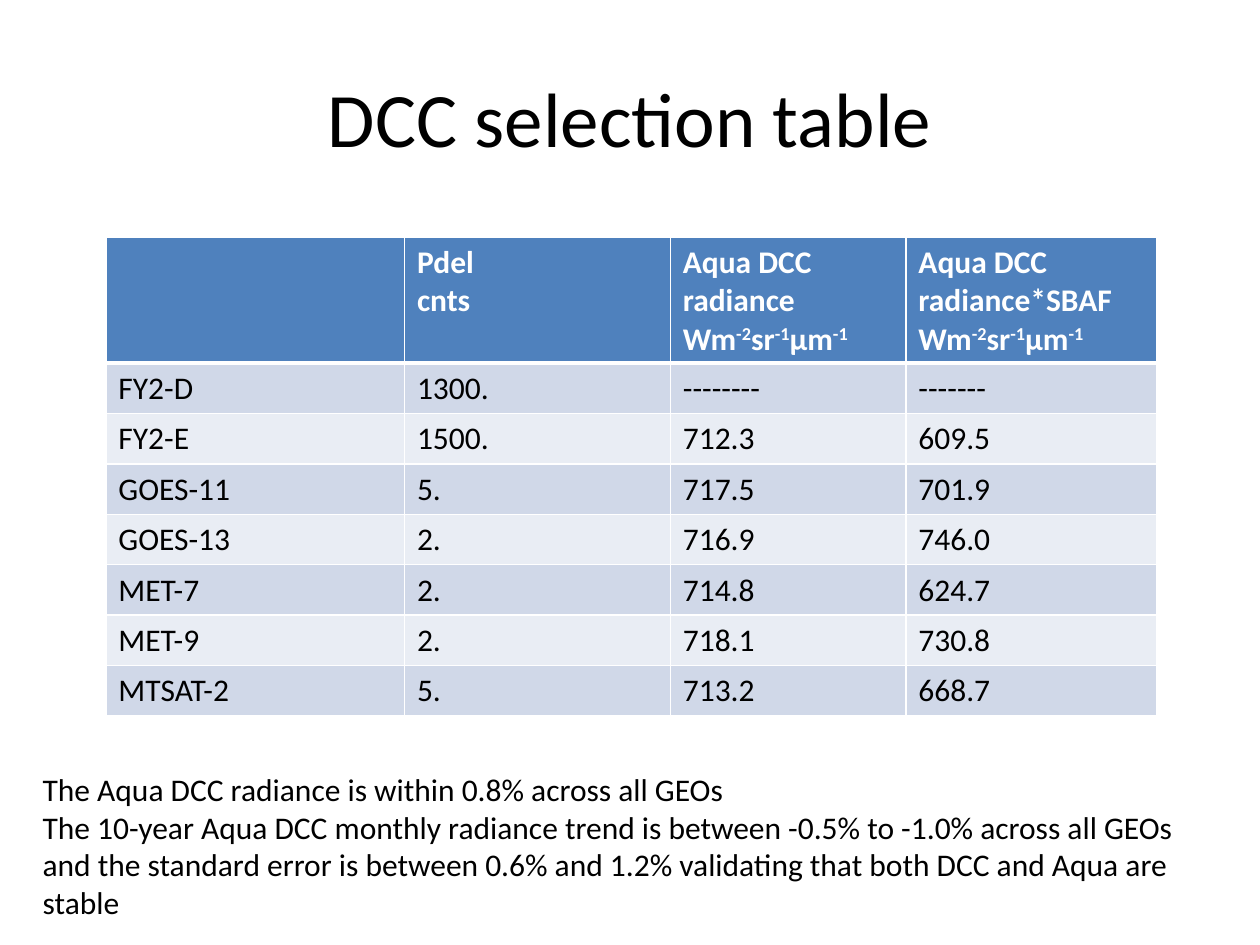
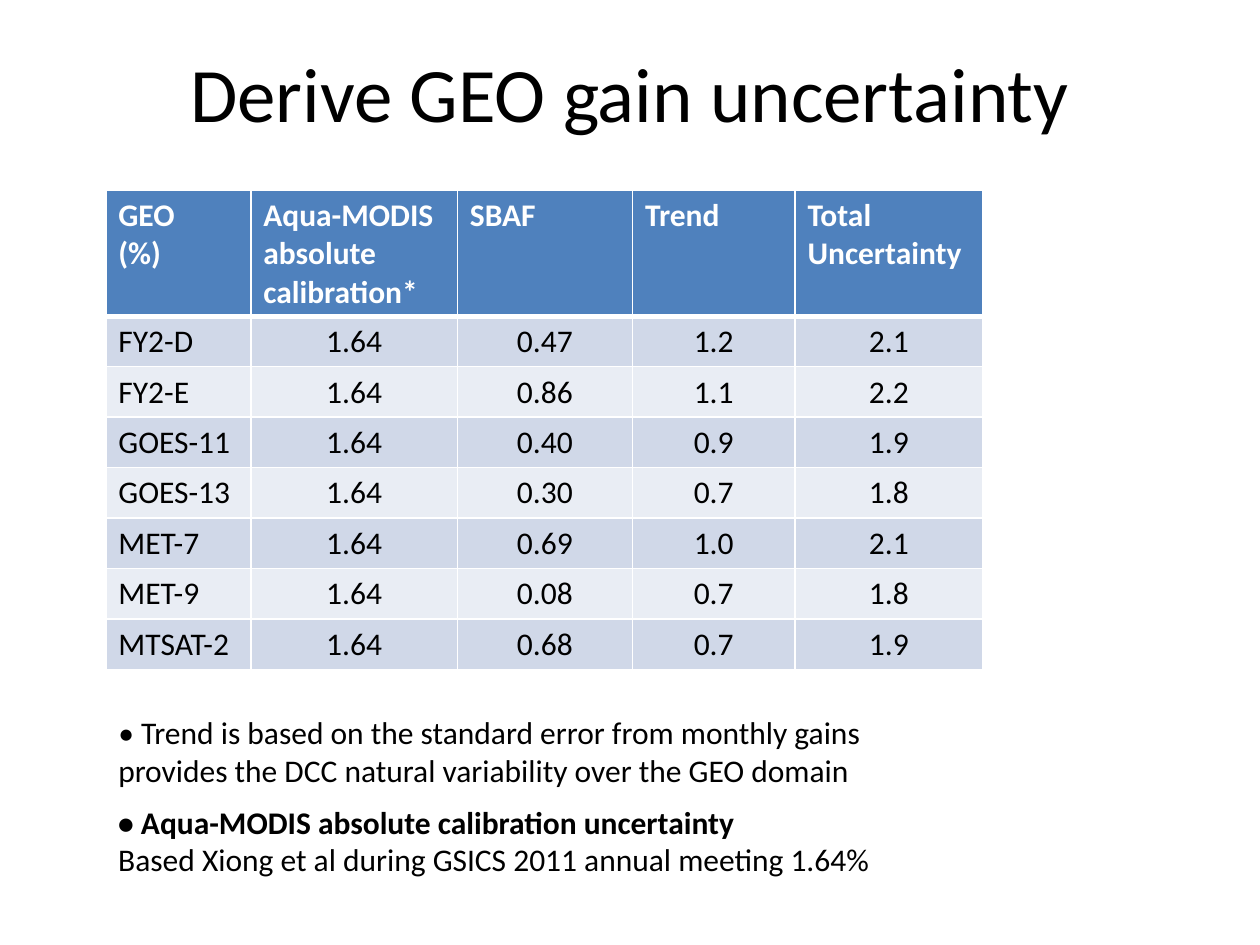
from pptx import Presentation
from pptx.dml.color import RGBColor
from pptx.enum import text as t
from pptx.oxml import parse_xml
from pptx.oxml.ns import nsdecls
from pptx.util import Inches, Pt

FONT = "Calibri"
BLACK = RGBColor(0x00, 0x00, 0x00)
WHITE = RGBColor(0xFF, 0xFF, 0xFF)
HEADER_BLUE = RGBColor(0x4F, 0x81, 0xBD)
BANDS = (RGBColor(0xD0, 0xD8, 0xE8), RGBColor(0xE9, 0xED, 0xF4))

LEFT, CENTER = t.PP_ALIGN.LEFT, t.PP_ALIGN.CENTER
HEADER_HEIGHT, ROW_HEIGHT = 1.0, 0.4
RADIANCE_UNIT = "Wm^-2^sr^-1^µm^-1"

SELECTION_HEADER = ["", "Pdel\ncnts", f"Aqua DCC radiance\n{RADIANCE_UNIT}",
                    f"Aqua DCC radiance*SBAF\n{RADIANCE_UNIT}"]
SELECTION_ROWS = [
    ("FY2-D", "1300.", "--------", "-------"),
    ("FY2-E", "1500.", "712.3", "609.5"),
    ("GOES-11", "5.", "717.5", "701.9"),
    ("GOES-13", "2.", "716.9", "746.0"),
    ("MET-7", "2.", "714.8", "624.7"),
    ("MET-9", "2.", "718.1", "730.8"),
    ("MTSAT-2", "5.", "713.2", "668.7"),
]

MODIS_CALIBRATION = "1.64"
UNCERTAINTY_HEADER = ["GEO\n(%)", "Aqua-MODIS absolute calibration*", "SBAF",
                      "Trend", "Total Uncertainty"]
UNCERTAINTY_ROWS = [
    (geo, MODIS_CALIBRATION, sbaf, trend, total)
    for geo, sbaf, trend, total in [
        ("FY2-D", "0.47", "1.2", "2.1"),
        ("FY2-E", "0.86", "1.1", "2.2"),
        ("GOES-11", "0.40", "0.9", "1.9"),
        ("GOES-13", "0.30", "0.7", "1.8"),
        ("MET-7", "0.69", "1.0", "2.1"),
        ("MET-9", "0.08", "0.7", "1.8"),
        ("MTSAT-2", "0.68", "0.7", "1.9"),
    ]
]


def write(frame, content, size=18, color=BLACK, align=LEFT, bold_lines=0):
    """Write one paragraph a line; text between carets is superscript."""
    for i, line in enumerate(content.split("\n")):
        paragraph = frame.paragraphs[0] if i == 0 else frame.add_paragraph()
        paragraph.alignment = align
        font = paragraph.font
        font.name, font.size, font.bold = FONT, Pt(size), i < bold_lines
        font.color.rgb = color
        for j, part in enumerate(line.split("^")):
            if part:
                run = paragraph.add_run()
                run.text = part
                if j % 2:
                    run._r.get_or_add_rPr().set("baseline", "30000")


def add_title(slide, title, height):
    box = slide.shapes.add_textbox(Inches(0.5), Inches(0.3), Inches(9), Inches(height))
    box.text_frame.word_wrap = True
    box.text_frame.vertical_anchor = t.MSO_ANCHOR.MIDDLE
    write(box.text_frame, title, size=44, align=CENTER)


def add_note(slide, box, content, wrap=True, bold_lines=0):
    frame = slide.shapes.add_textbox(*map(Inches, box)).text_frame
    frame.word_wrap = wrap
    frame.auto_size = t.MSO_AUTO_SIZE.SHAPE_TO_FIT_TEXT
    write(frame, content, bold_lines=bold_lines)


def add_borders(cell, bottom):
    """Draw white cell borders, 1 pt wide except for the bottom one."""
    properties = cell._tc.get_or_add_tcPr()
    for position, (side, width) in enumerate(
            [("lnL", 1), ("lnR", 1), ("lnT", 1), ("lnB", bottom)]):
        properties.insert(position, parse_xml(
            f'<a:{side} {nsdecls("a")} w="{Pt(width)}"><a:solidFill>'
            f'<a:srgbClr val="{WHITE}"/></a:solidFill></a:{side}>'))


def add_geo_table(slide, left, top, widths, header, rows, value_align):
    height = HEADER_HEIGHT + ROW_HEIGHT * len(rows)
    table = slide.shapes.add_table(
        len(rows) + 1, len(widths), Inches(left), Inches(top),
        Inches(sum(widths)), Inches(height)).table
    for column, width in zip(table.columns, widths):
        column.width = Inches(width)
    for r, values in enumerate([header, *rows]):
        is_header = r == 0
        table.rows[r].height = Inches(HEADER_HEIGHT if is_header else ROW_HEIGHT)
        for c, value in enumerate(values):
            cell = table.cell(r, c)
            cell.fill.solid()
            cell.fill.fore_color.rgb = HEADER_BLUE if is_header else BANDS[(r - 1) % 2]
            add_borders(cell, bottom=3 if is_header else 1)
            write(cell.text_frame, value,
                  color=WHITE if is_header else BLACK,
                  align=LEFT if is_header or c == 0 else value_align,
                  bold_lines=2 if is_header else 0)


def selection_slide(slide):
    add_title(slide, "DCC selection table", height=1.25)
    add_geo_table(slide, 0.84, 1.88, [2.37, 2.11, 1.87, 1.99],
                  SELECTION_HEADER, SELECTION_ROWS, LEFT)
    add_note(slide, (0.24, 6.06, 9.26, 1.31),
             "The Aqua DCC radiance is within 0.8% across all GEOs\n"
             "The 10-year Aqua DCC monthly radiance trend is between -0.5% to -1.0% "
             "across all GEOs and the standard error is between 0.6% and 1.2% "
             "validating that both DCC and Aqua are stable")


def uncertainty_slide(slide):
    add_title(slide, "Derive GEO gain uncertainty", height=0.86)
    add_geo_table(slide, 0.84, 1.51, [1.15, 1.64, 1.39, 1.29, 1.49],
                  UNCERTAINTY_HEADER, UNCERTAINTY_ROWS, CENTER)
    add_note(slide, (0.84, 5.61, 6.95, 0.71),
             "• Trend is based on the standard error from monthly gains "
             "provides the DCC natural variability over the GEO domain")
    add_note(slide, (0.84, 6.32, 6.23, 0.71),
             "• Aqua-MODIS absolute calibration uncertainty\n"
             "Based Xiong et al during GSICS 2011 annual meeting 1.64%",
             wrap=False, bold_lines=1)


def main():
    deck = Presentation()
    deck.slide_width, deck.slide_height = Inches(10), Inches(7.5)
    blank = deck.slide_layouts[6]
    for build in (selection_slide, uncertainty_slide):
        build(deck.slides.add_slide(blank))
    deck.save("out.pptx")


if __name__ == "__main__":
    main()
